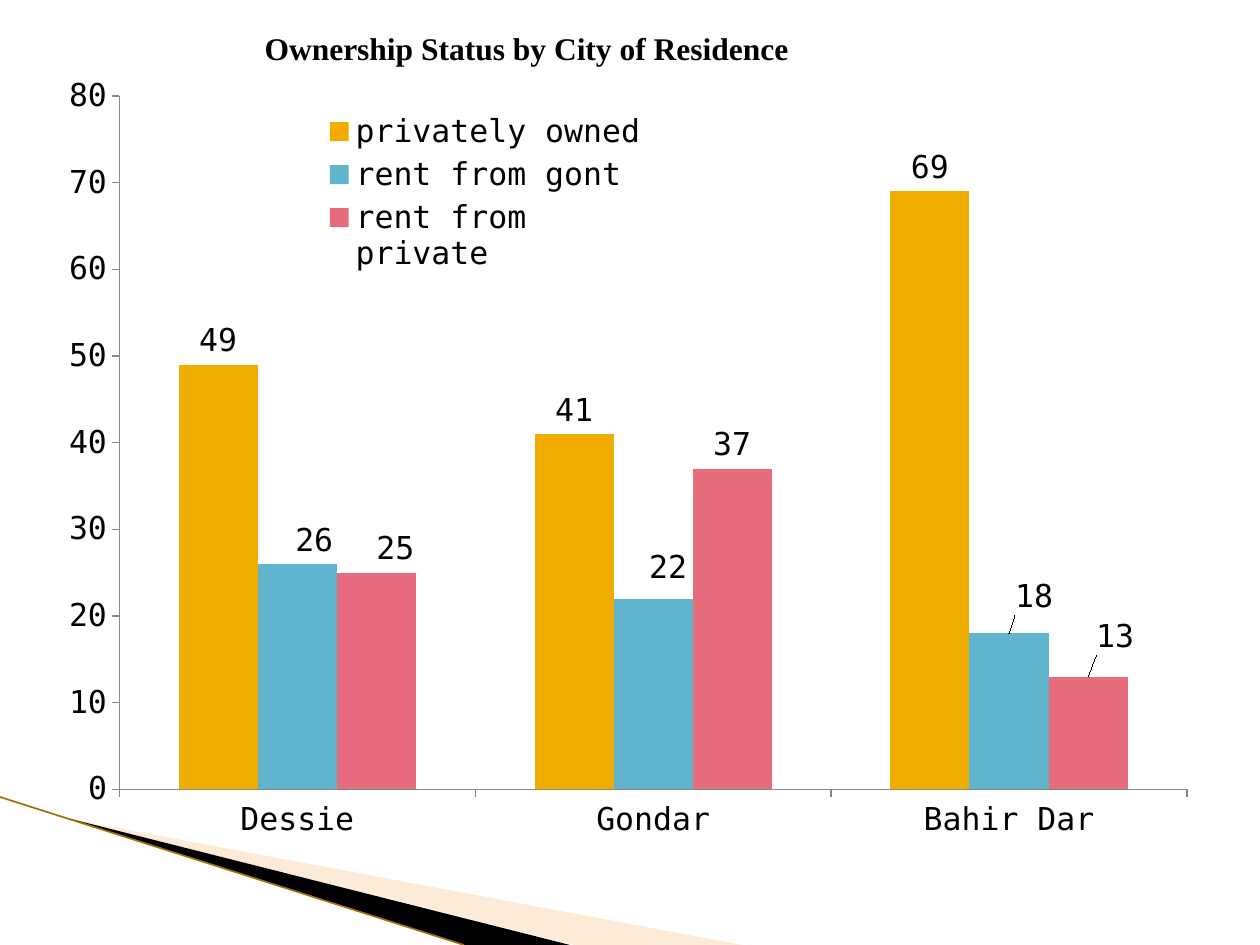
from lxml import etree
from pptx import Presentation
from pptx.chart.data import CategoryChartData
from pptx.dml.color import RGBColor
from pptx.enum.chart import XL_CHART_TYPE, XL_LABEL_POSITION, XL_LEGEND_POSITION, XL_TICK_MARK
from pptx.enum.shapes import MSO_CONNECTOR
from pptx.enum.text import MSO_ANCHOR, MSO_AUTO_SIZE, PP_ALIGN
from pptx.oxml.ns import qn
from pptx.util import Pt

COLUMN = XL_CHART_TYPE.COLUMN_CLUSTERED
ABOVE = XL_LABEL_POSITION.OUTSIDE_END
RIGHT = XL_LEGEND_POSITION.RIGHT
OUT, NONE = XL_TICK_MARK.OUTSIDE, XL_TICK_MARK.NONE
STRAIGHT = MSO_CONNECTOR.STRAIGHT
MIDDLE, LEFT, FIXED = MSO_ANCHOR.MIDDLE, PP_ALIGN.LEFT, MSO_AUTO_SIZE.NONE

SCALE = 914400 / 126
COLORS = {"text": "000000", "axis": "878787", "gold": "F0AD00", "blue": "60B5CC",
          "rose": "E66C7D", "sand": "FCCF9B", "dark": "000000", "edge": "9F7300"}
CITIES = ["Dessie", "Gondar", "Bahir Dar"]
SERIES = [
    ("privately owned", (49, 41, 69), "gold", {}),
    ("rent from gont", (26, 22, 18), "blue", {0: (17, 0), 1: (15, -7), 2: (25, -13)}),
    ("rent from private", (25, 37, 13), "rose", {0: (19, 0), 2: (27, -16)}),
]
MONO = {"name": "DejaVu Sans Mono", "size": Pt(18), "bold": False}
SERIF = {"name": "Times New Roman", "size": Pt(18), "bold": True}


def px(n):
    return round(n * SCALE)


def rgb(key):
    return RGBColor.from_string(COLORS[key])


def style(item, values):
    for key, value in values.items():
        setattr(item, key, value)


def ink(font, values):
    style(font, values)
    font.color.rgb = rgb("text")


def layout(values, inner=False):
    node = etree.Element(qn("c:layout"))
    manual = etree.SubElement(node, qn("c:manualLayout"))
    if inner:
        etree.SubElement(manual, qn("c:layoutTarget")).set("val", "inner")
    if len(values) == 4:
        for tag in ("xMode", "yMode"):
            etree.SubElement(manual, qn("c:" + tag)).set("val", "edge")
    for tag, value in zip("xywh", values):
        etree.SubElement(manual, qn("c:" + tag)).set("val", f"{value:.4f}")
    return node


def place(parent, node, after=None):
    for old in parent.findall(qn("c:layout")):
        parent.remove(old)
    if after is None:
        parent.insert(0, node)
    else:
        parent.find(qn(after)).addnext(node)


def add_wedge(slide, box, points, key, alpha=100):
    x, y = box[:2]
    spots = [(x + a, y + b) for a, b in points]
    build = slide.shapes.build_freeform(*spots[0], scale=SCALE)
    build.add_line_segments(spots[1:], close=True)
    shape = build.convert_to_shape()
    shape.shadow.inherit = False
    shape.fill.solid()
    shape.fill.fore_color.rgb = rgb(key)
    shape.line.fill.background()
    if alpha < 100:
        color = shape.fill._xPr.find(".//" + qn("a:srgbClr"))
        etree.SubElement(color, qn("a:alpha")).set("val", str(alpha * 1000))


def add_corner(slide, box):
    x, y, w, h = box
    add_wedge(slide, box, [(69, 22), (w, h), (574, h)], "sand", 40)
    add_wedge(slide, box, [(67, 21), (570, h), (464, h)], "dark")
    line = slide.shapes.add_connector(STRAIGHT, px(x), px(y), px(x + 464), px(y + h))
    line.line.color.rgb = rgb("edge")
    line.line.width = Pt(0.95)
    etree.SubElement(line._element.spPr, qn("a:effectLst"))


def add_labels(series, shifts, w, h):
    labels = series.data_labels
    style(labels, {"show_value": True, "position": ABOVE})
    ink(labels.font, MONO)
    for i, (dx, dy) in shifts.items():
        label = series.points[i].data_label
        ink(label.font, MONO)
        label.position = ABOVE
        node = series._element.dLbls.find(f"{qn('c:dLbl')}[{list(shifts).index(i) + 1}]")
        place(node, layout((dx / w, dy / h)), "c:idx")


def add_bars(slide, box):
    w, h = box[2:]
    data = CategoryChartData()
    data.categories = CITIES
    for name, values, _, _ in SERIES:
        data.add_series(name, values)
    chart = slide.shapes.add_chart(COLUMN, *map(px, box), data).chart
    style(chart, {"has_title": False, "has_legend": True})
    ink(chart.font, MONO)
    plot = chart.plots[0]
    style(plot, {"gap_width": 150, "overlap": 0, "vary_by_categories": False})
    for series, (_, _, key, shifts) in zip(plot.series, SERIES):
        series.format.fill.solid()
        series.format.fill.fore_color.rgb = rgb(key)
        add_labels(series, shifts, w, h)
    for axis in (chart.category_axis, chart.value_axis):
        style(axis, {"has_major_gridlines": False, "major_tick_mark": OUT,
                     "minor_tick_mark": NONE})
        axis.format.line.color.rgb = rgb("axis")
        ink(axis.tick_labels.font, MONO)
    style(chart.value_axis, {"minimum_scale": 0, "maximum_scale": 80, "major_unit": 10})
    style(chart.legend, {"position": RIGHT, "include_in_layout": False})
    ink(chart.legend.font, MONO)
    place(chart.legend._element, layout((288 / w, 44 / h, 330 / w, 172 / h)), "c:legendPos")
    area = chart._chartSpace.chart.plotArea
    place(area, layout((0.073, 0.041, 0.892, 0.857), True))


def add_title(slide, box):
    title = slide.shapes.title
    style(title, dict(zip(("left", "top", "width", "height"), map(px, box))))
    frame = title.text_frame
    frame.text = "Ownership Status by City of Residence"
    style(frame, {"word_wrap": False, "auto_size": FIXED, "vertical_anchor": MIDDLE})
    line = frame.paragraphs[0]
    line.alignment = LEFT
    ink(line.runs[0].font, SERIF)


def main():
    deck = Presentation()
    style(deck, {"slide_width": px(1260), "slide_height": px(945)})
    slide = deck.slides.add_slide(deck.slide_layouts[5])
    add_corner(slide, (0, 797, 742, 148))
    add_bars(slide, (32, 63, 1197, 809))
    add_title(slide, (252, 22, 554, 51))
    deck.save("out.pptx")


if __name__ == "__main__":
    main()
